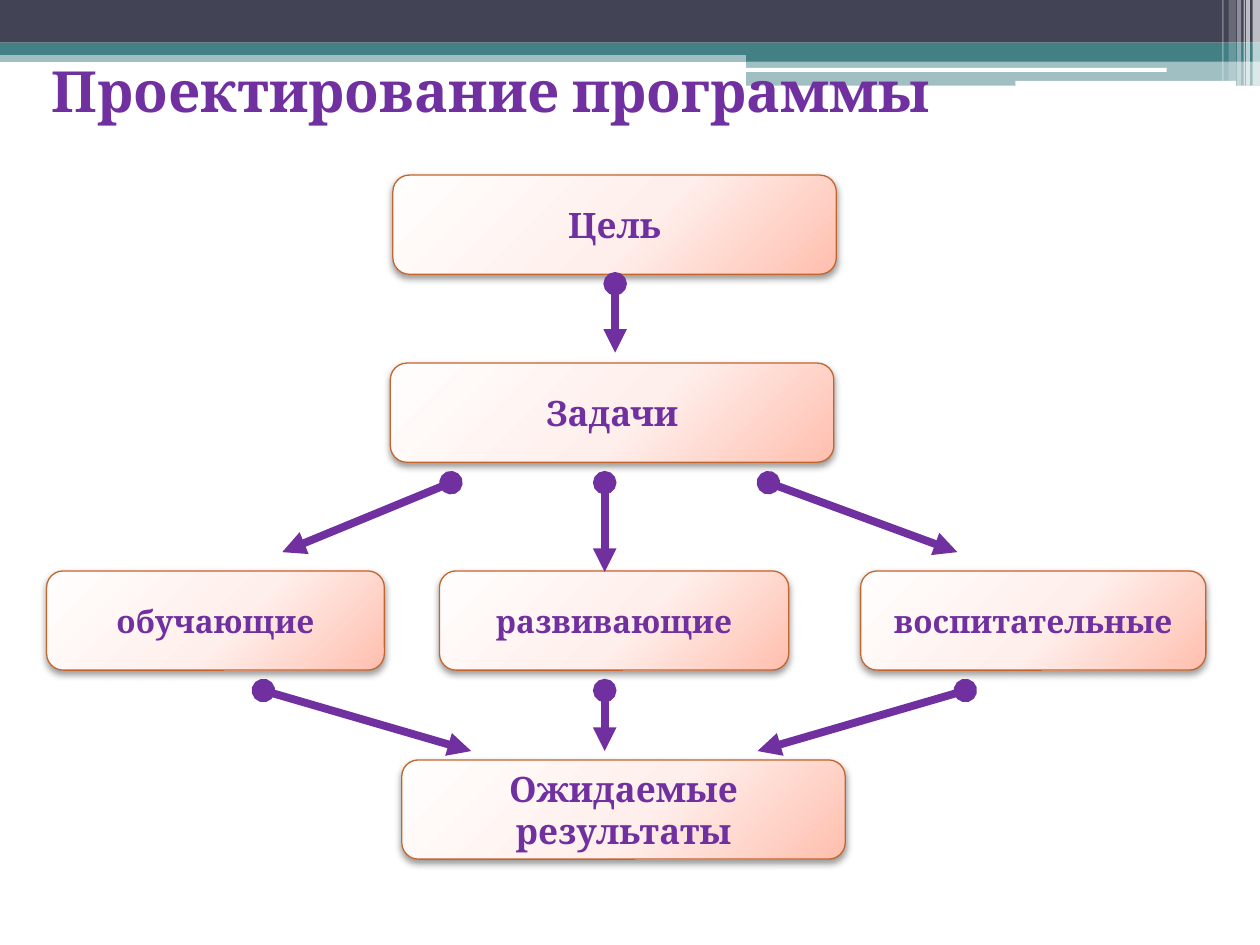
from lxml.etree import SubElement as Sub
from pptx import Presentation
from pptx.dml.color import RGBColor
from pptx.enum.shapes import MSO_CONNECTOR as Link, MSO_SHAPE as Kind
from pptx.enum.text import MSO_ANCHOR as Anchor, MSO_AUTO_SIZE as Fit, PP_ALIGN as Align
from pptx.oxml.ns import qn
from pptx.util import Cm, Pt

PURPLE = RGBColor(0x70, 0x30, 0xA0)
ORANGE = RGBColor(0xC4, 0x65, 0x2D)
NAVY = RGBColor(0x42, 0x44, 0x56)
TEAL = RGBColor(0x43, 0x80, 0x86)
WHITE = RGBColor(0xFF, 0xFF, 0xFF)
BLACK = RGBColor(0, 0, 0)
CREAM = RGBColor(0xFF, 0xFE, 0xFD)
BLUSH = RGBColor(0xFF, 0xEF, 0xEC)
PEACH = RGBColor(0xFF, 0xBF, 0xAE)
FONT = "Cambria"
WIDTH = 25.4

# left, top, width, height, colour, opacity in percent
BANDS = [
    (0, 1.02, WIDTH, 0.23, TEAL, 50),
    (0, 0, WIDTH, 0.86, NAVY, 100),
    (0, 0.86, WIDTH, 0.25, TEAL, 100),
    (15.04, 0.99, 10.36, 0.25, TEAL, 100),
    (15.04, 1.22, 10.36, 0.51, TEAL, 50),
]
BARS = [(15.01, 1.37, 8.51, 0.08), (20.47, 1.63, 4.45, 0.1)]
# left, width, height, opacity in percent
STRIPES = [
    (25.25, 0.15, 1.73, 65),
    (25.12, 0.08, 1.73, 65),
    (25.07, 0.03, 1.73, 60),
    (24.94, 0.08, 1.73, 40),
    (24.77, 0.15, 1.63, 20),
    (24.64, 0.03, 1.63, 30),
]
# text, left, top, width, font size
NODES = [
    ("Цель", 7.92, 3.53, 8.94, 20),
    ("Задачи", 7.87, 7.32, 8.94, 20),
    ("обучающие", 0.94, 11.51, 6.81, 18),
    ("развивающие", 8.86, 11.51, 7.04, 18),
    ("воспитательные", 17.35, 11.51, 6.96, 18),
    ("Ожидаемые результаты", 8.1, 15.32, 8.94, 20),
]
# start x, start y, end x, end y
ARROWS = [
    (12.4, 5.72, 12.4, 7.11),
    (9.09, 9.73, 5.69, 11.13),
    (12.19, 9.73, 12.19, 11.53),
    (15.49, 9.73, 19.3, 11.13),
    (5.31, 13.92, 9.5, 15.14),
    (12.19, 13.92, 12.19, 15.14),
    (19.46, 13.92, 15.27, 15.14),
]


def add_color(parent, color, alpha=100):
    node = Sub(parent, qn("a:srgbClr"), val=str(color))
    if alpha < 100:
        Sub(node, qn("a:alpha"), val=str(alpha * 1000))


def add_band(slide, left, top, width, height, color, alpha=100, kind=Kind.RECTANGLE):
    band = slide.shapes.add_shape(kind, Cm(left), Cm(top), Cm(width), Cm(height))
    band.shadow.inherit = False
    band.line.fill.background()
    band.fill.solid()
    band.fill.fore_color.rgb = color
    if alpha < 100:
        tint = band.fill._xPr.find(qn("a:solidFill"))[0]
        Sub(tint, qn("a:alpha"), val=str(alpha * 1000))


def add_glow(shape):
    """Fill with a radial gradient centred beyond the top left corner."""
    props = shape._element.spPr
    grad = props.makeelement(qn("a:gradFill"), rotWithShape="1")
    stops = Sub(grad, qn("a:gsLst"))
    for pos, color in ((0, CREAM), (55, BLUSH), (100, PEACH)):
        add_color(Sub(stops, qn("a:gs"), pos=str(pos * 1000)), color)
    way = Sub(grad, qn("a:path"), path="circle")
    Sub(way, qn("a:fillToRect"), l="-40000", t="-90000", r="140000", b="190000")
    props.find(qn("a:prstGeom")).addnext(grad)


def add_shadow(shape):
    shape.shadow.inherit = False
    effects = shape._element.spPr.find(qn("a:effectLst"))
    outer = Sub(effects, qn("a:outerShdw"), blurRad=str(Pt(4.1)), dist=str(Pt(2)),
                dir="5400000", rotWithShape="0")
    add_color(outer, BLACK, 40)


def set_text(shape, text, size):
    frame = shape.text_frame
    frame.text = text
    frame.word_wrap = True
    frame.auto_size = Fit.NONE
    frame.vertical_anchor = Anchor.MIDDLE
    para = frame.paragraphs[0]
    para.alignment = Align.CENTER
    font = para.runs[0].font
    font.name, font.size, font.bold = FONT, Pt(size), True
    font.color.rgb = PURPLE


def add_node(slide, text, left, top, width, size):
    node = slide.shapes.add_shape(
        Kind.ROUNDED_RECTANGLE, Cm(left), Cm(top), Cm(width), Cm(2))
    add_glow(node)
    node.line.color.rgb = ORANGE
    node.line.width = Pt(0.75)
    add_shadow(node)
    set_text(node, text, size)


def add_arrow(slide, *ends):
    arrow = slide.shapes.add_connector(Link.STRAIGHT, *map(Cm, ends))
    arrow.line.color.rgb = PURPLE
    arrow.line.width = Pt(4.5)
    line = arrow.line._ln
    Sub(line, qn("a:headEnd"), type="oval")
    Sub(line, qn("a:tailEnd"), type="triangle")
    Sub(arrow._element.spPr, qn("a:effectLst"))


def set_title(slide, text):
    """Fill the title and bring it in front of the bands."""
    title = slide.shapes.title
    title.left, title.top, title.width, title.height = map(Cm, (0, 0.53, 19.79, 2.57))
    set_text(title, text, 32.4)
    slide.shapes._spTree.append(title._element)


def main():
    deck = Presentation()
    deck.slide_width, deck.slide_height = Cm(WIDTH), Cm(19.05)
    slide = deck.slides.add_slide(deck.slide_layouts[5])
    for band in BANDS:
        add_band(slide, *band)
    for bar in BARS:
        add_band(slide, *bar, WHITE, kind=Kind.ROUNDED_RECTANGLE)
    for left, width, height, alpha in STRIPES:
        add_band(slide, left, 0, width, height, WHITE, alpha)
    for node in NODES:
        add_node(slide, *node)
    set_title(slide, "Проектирование программы")
    for ends in ARROWS:
        add_arrow(slide, *ends)
    deck.save("out.pptx")


if __name__ == "__main__":
    main()
